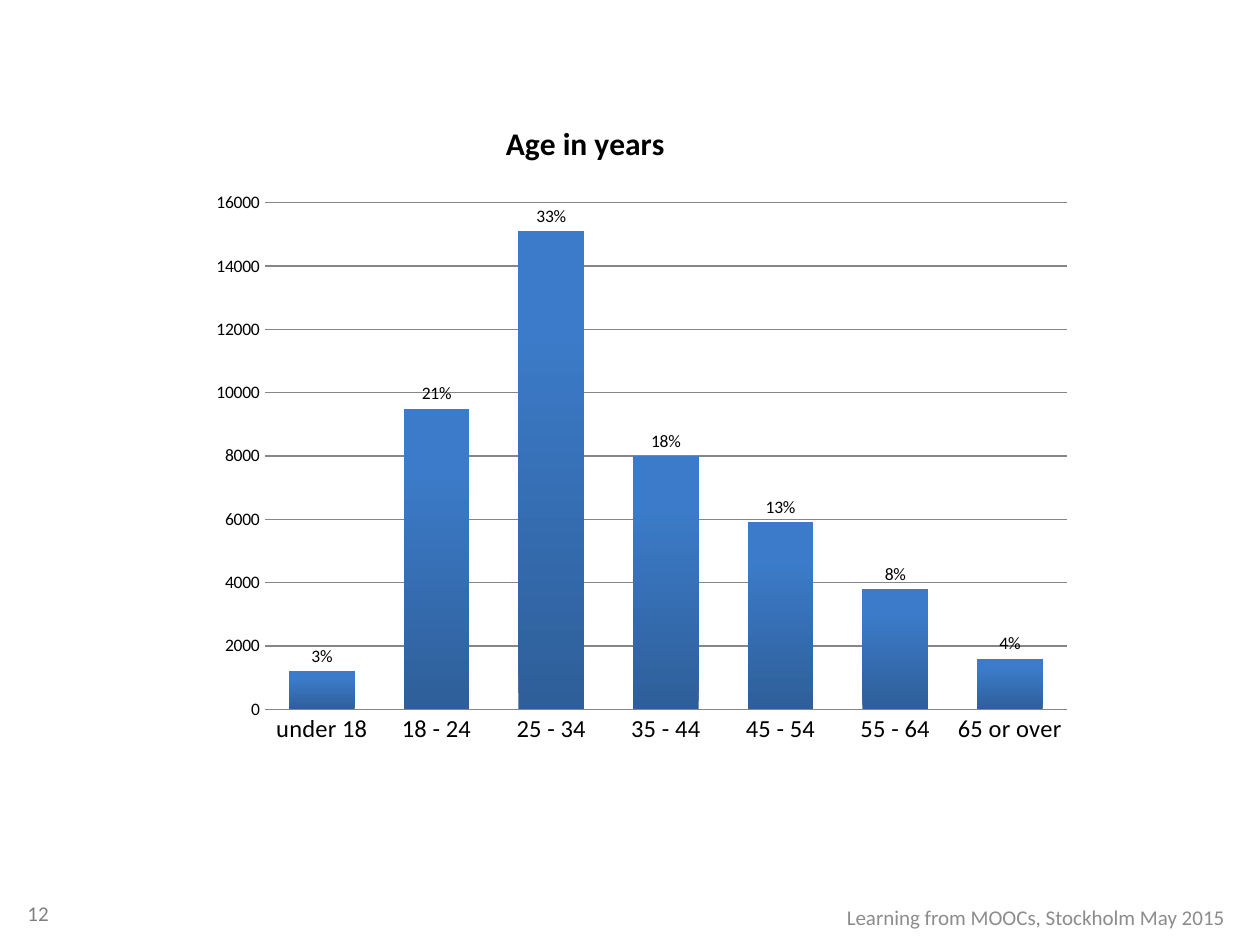
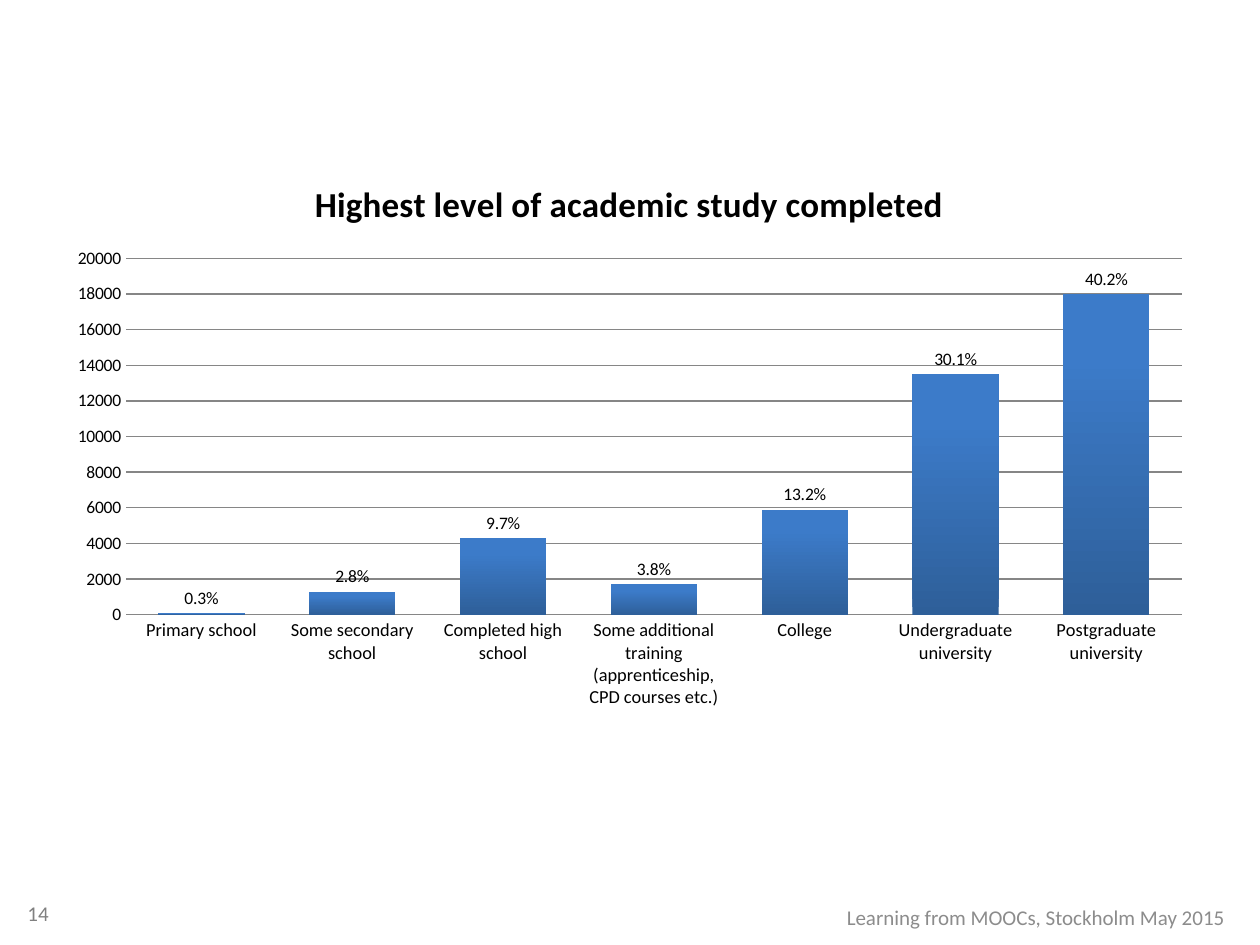
from dataclasses import dataclass

from lxml import etree
from pptx import Presentation
from pptx.chart.data import CategoryChartData
from pptx.dml.color import RGBColor as RGB
from pptx.enum.chart import XL_CHART_TYPE as ChartType
from pptx.enum.chart import XL_LABEL_POSITION as LabelPosition
from pptx.enum.chart import XL_TICK_MARK as TickMark
from pptx.enum.text import MSO_ANCHOR as Anchor
from pptx.enum.text import PP_ALIGN as Align
from pptx.oxml.ns import qn
from pptx.util import Inches, Pt


@dataclass(frozen=True)
class Theme:
    font: str = "Calibri"
    text: RGB = RGB(0, 0, 0)
    number: RGB = RGB(0x80, 0x80, 0x80)
    footer: RGB = RGB(0x8C, 0x8C, 0x8C)
    grid: RGB = RGB(0x86, 0x86, 0x86)
    bar_bottom: RGB = RGB(0x2E, 0x5F, 0x99)
    bar_top: RGB = RGB(0x3C, 0x7B, 0xC9)
    footer_size: float = 12
    chart_size: float = 10
    age_title_size: float = 18
    age_category_size: float = 14
    study_title_size: float = 20
    study_category_size: float = 10.5


FOOTER = "Learning from MOOCs, Stockholm May 2015"

AGES = [
    ("under 18", 1200, "3%"),
    ("18 - 24", 9500, "21%"),
    ("25 - 34", 15100, "33%"),
    ("35 - 44", 8000, "18%"),
    ("45 - 54", 5900, "13%"),
    ("55 - 64", 3800, "8%"),
    ("65 or over", 1600, "4%"),
]

STUDY_LEVELS = [
    ("Primary school", 100, "0.3%"),
    ("Some secondary school", 1300, "2.8%"),
    ("Completed high school", 4300, "9.7%"),
    ("Some additional training (apprenticeship, CPD courses etc.)", 1700, "3.8%"),
    ("College", 5900, "13.2%"),
    ("Undergraduate university", 13500, "30.1%"),
    ("Postgraduate university", 18000, "40.2%"),
]


class Deck:
    def __init__(self, theme):
        self.theme = theme
        self.prs = Presentation()
        self.prs.slide_width, self.prs.slide_height = Inches(10), Inches(7.5)
        self.slide = None

    def add_slide(self, number):
        theme = self.theme
        self.slide = self.prs.slides.add_slide(self.prs.slide_layouts[6])
        self.text(str(number), (0.12, 7.11, 0.4, 0.27), theme.number, Align.LEFT)
        self.text(FOOTER, (5.63, 7.13, 4.19, 0.29), theme.footer, Align.RIGHT)

    def style(self, font, size, color, bold=False):
        font.name, font.size, font.bold = self.theme.font, Pt(size), bold
        font.color.rgb = color

    def text(self, words, box, color, align):
        frame = self.slide.shapes.add_textbox(*map(Inches, box)).text_frame
        frame.word_wrap = True
        frame.vertical_anchor = Anchor.MIDDLE
        frame.text = words
        line = frame.paragraphs[0]
        line.alignment = align
        self.style(line.runs[0].font, self.theme.footer_size, color)

    def column_chart(self, title, rows, box, plot_box, title_size, category_size, top, step):
        """Draw rows of (category, count, label); both boxes are in inches on the slide."""
        theme = self.theme
        categories, counts, labels = zip(*rows)
        data = CategoryChartData()
        data.categories = categories
        data.add_series("Series 1", counts)
        chart = self.slide.shapes.add_chart(
            ChartType.COLUMN_CLUSTERED, *map(Inches, box), data).chart
        self.style(chart.font, theme.chart_size, theme.text)
        chart.has_legend = False
        heading = chart.chart_title.text_frame
        heading.text = title
        self.style(heading.paragraphs[0].runs[0].font, title_size, theme.text, bold=True)
        self.format_axes(chart, category_size, top, step)
        self.format_columns(chart.plots[0], labels)
        self.place_plot(chart, box, plot_box)

    def format_axes(self, chart, category_size, top, step):
        theme = self.theme
        bottom, side = chart.category_axis, chart.value_axis
        for axis, size in ((bottom, category_size), (side, theme.chart_size)):
            axis.major_tick_mark = axis.minor_tick_mark = TickMark.NONE
            self.style(axis.tick_labels.font, size, theme.text)
        side.minimum_scale, side.maximum_scale, side.major_unit = 0, top, step
        side.has_major_gridlines = True
        side.format.line.fill.background()
        for line in (bottom.format.line, side.major_gridlines.format.line):
            line.color.rgb = theme.grid
            line.width = Pt(0.75)

    def format_columns(self, plot, labels):
        theme = self.theme
        plot.gap_width, plot.overlap = 75, -25
        plot.vary_by_categories = False
        columns = plot.series[0]
        fill = columns.format.fill
        fill.gradient()
        fill.gradient_angle = 90
        lower, upper = fill.gradient_stops
        lower.color.rgb, lower.position = theme.bar_bottom, 0
        upper.color.rgb, upper.position = theme.bar_top, 0.8
        for index, share in enumerate(labels):
            label = columns.points[index].data_label
            label.text_frame.text = share
            label.position = LabelPosition.OUTSIDE_END
            run = label.text_frame.paragraphs[0].runs[0]
            self.style(run.font, theme.chart_size, theme.text)

    def place_plot(self, chart, box, plot_box):
        left, top, width, height = box
        x, y, w, h = plot_box
        fractions = {"x": (x - left) / width, "y": (y - top) / height,
                     "w": w / width, "h": h / height}
        area = chart.plots[0]._element.getparent()
        for old in area.findall(qn("c:layout")):
            area.remove(old)
        layout = etree.Element(qn("c:layout"))
        area.insert(0, layout)
        manual = etree.SubElement(layout, qn("c:manualLayout"))
        modes = {"layoutTarget": "inner", "xMode": "edge", "yMode": "edge"}
        for tag, value in {**modes, **fractions}.items():
            etree.SubElement(manual, qn(f"c:{tag}")).set("val", str(value))


def main():
    theme = Theme()
    deck = Deck(theme)

    deck.add_slide(12)
    deck.column_chart(
        "Age in years", AGES, (0.59, 0.76, 8.11, 5.51), (2.1, 1.61, 6.37, 4.02),
        theme.age_title_size, theme.age_category_size, top=16000, step=2000)

    deck.add_slide(14)
    deck.column_chart(
        "Highest level of academic study completed", STUDY_LEVELS,
        (0.43, 1.23, 9.13, 4.49), (1, 2.05, 8.38, 2.83),
        theme.study_title_size, theme.study_category_size, top=20000, step=2000)

    deck.prs.save("out.pptx")


if __name__ == "__main__":
    main()
